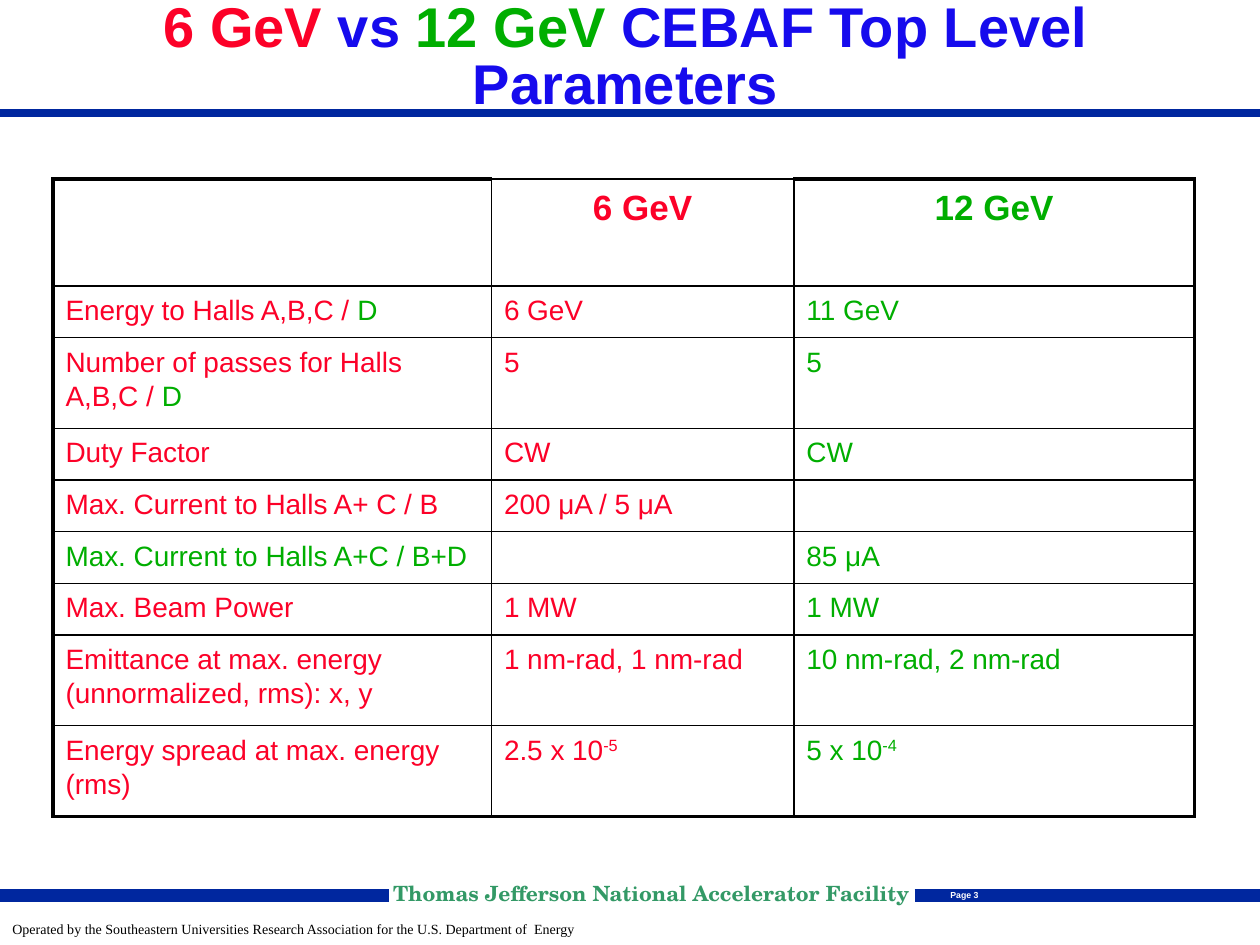
import dataclasses

import lxml.etree
import pptx
import pptx.dml.color
import pptx.enum.shapes
import pptx.enum.text
import pptx.oxml.ns
import pptx.util

Inches = pptx.util.Inches
Pt = pptx.util.Pt
ALIGN = pptx.enum.text.PP_ALIGN
ANCHOR = pptx.enum.text.MSO_ANCHOR


@dataclasses.dataclass(frozen=True)
class Theme:
    """Colours, fonts and type sizes of the slide."""

    red: str = "FC0128"
    green: str = "00AE00"
    blue: str = "160BED"
    bar: str = "00279F"
    facility: str = "339966"
    black: str = "000000"
    white: str = "FFFFFF"
    sans: str = "Arial"
    serif: str = "Times New Roman"
    school: str = "TeX Gyre Schola"
    title_size: float = 32
    header_size: float = 20
    body_size: float = 16
    facility_size: float = 12
    operator_size: float = 8
    page_size: float = 5
    thick: float = 2.25
    thin: float = 1


THEME = Theme()

TITLE = [("6 GeV ", THEME.red), ("vs ", THEME.blue), ("12 GeV", THEME.green),
         (" CEBAF Top Level Parameters", THEME.blue)]
COLUMN_WIDTHS = [3.48, 2.4, 3.18]
COLUMN_COLOURS = [THEME.red, THEME.red, THEME.green]
HEADER_HEIGHT, SINGLE_HEIGHT, DOUBLE_HEIGHT = 0.85, 0.41, 0.72
HALL_D = ("D", THEME.green)
PARAMETERS = [
    ("", "6 GeV", "12 GeV"),
    (["Energy to Halls A,B,C / ", HALL_D], "6 GeV", "11 GeV"),
    (["Number of passes for Halls A,B,C / ", HALL_D], "5", "5"),
    ("Duty Factor", "CW", "CW"),
    ("Max. Current to Halls A+ C / B", "200 μA / 5 μA", ""),
    ([("Max. Current to Halls A+C / B+D", THEME.green)], "", "85 μA"),
    ("Max. Beam Power", "1 MW", "1 MW"),
    ("Emittance at max. energy (unnormalized, rms): x, y",
     "1 nm-rad, 1 nm-rad", "10 nm-rad, 2 nm-rad"),
    ("Energy spread at max. energy (rms)",
     ["2.5 x 10", ("-5", THEME.red, True)],
     ["5 x 10", ("-4", THEME.green, True)]),
]
TWO_LINE_ROWS = {2, 7, 8}


def rgb(value):
    """Return the colour object for a hex value."""
    return pptx.dml.color.RGBColor.from_string(value)


def format_paragraph(paragraph, font, size, bold=False, spacing=1.0, align=ALIGN.LEFT):
    """Set the alignment, line spacing and font of a paragraph."""
    paragraph.alignment = align
    paragraph.line_spacing = spacing
    paragraph.font.name = font
    paragraph.font.size = Pt(size)
    paragraph.font.bold = bold


def add_run(paragraph, text, colour, superscript=False):
    """Append one coloured run, raised if it is a superscript."""
    run = paragraph.add_run()
    run.text = text
    run.font.color.rgb = rgb(colour)
    if superscript:
        run.font._element.set("baseline", "30000")


def set_title(slide):
    """Place and fill the title placeholder."""
    title = slide.shapes.title
    title.left, title.top = Inches(0.18), Inches(0.02)
    title.width, title.height = Inches(9.57), Inches(0.9)
    frame = title.text_frame
    frame.auto_size = pptx.enum.text.MSO_AUTO_SIZE.NONE
    frame.vertical_anchor = ANCHOR.MIDDLE
    heading = frame.paragraphs[0]
    format_paragraph(heading, THEME.sans, THEME.title_size, True, 0.85, ALIGN.CENTER)
    for text, colour in TITLE:
        add_run(heading, text, colour)


def add_bar(slide, start, end, y, weight):
    """Draw a horizontal bar in the frame colour."""
    bar = slide.shapes.add_connector(
        pptx.enum.shapes.MSO_CONNECTOR.STRAIGHT,
        Inches(start), Inches(y), Inches(end), Inches(y))
    bar.line.color.rgb = rgb(THEME.bar)
    bar.line.width = Pt(weight)
    lxml.etree.SubElement(bar._element.spPr, pptx.oxml.ns.qn("a:effectLst"))


def add_label(slide, text, box, colour, font, size, wrap=True, inset=True, **style):
    """Add a one-line text box of the footer."""
    frame = slide.shapes.add_textbox(*map(Inches, box)).text_frame
    frame.word_wrap = wrap
    if not inset:
        frame.margin_left = frame.margin_right = 0
        frame.margin_top = frame.margin_bottom = 0
    label = frame.paragraphs[0]
    format_paragraph(label, font, size, **style)
    add_run(label, text, colour)


def set_borders(cell, weights):
    """Draw the left, right, top and bottom borders of a cell."""
    properties = cell._tc.get_or_add_tcPr()
    for index, (side, weight) in enumerate(zip("LRTB", weights)):
        line = pptx.oxml.parse_xml(
            f'<a:ln{side} {pptx.oxml.ns.nsdecls("a")} w="{int(Pt(weight))}"><a:solidFill>'
            f'<a:srgbClr val="{THEME.black}"/></a:solidFill></a:ln{side}>')
        properties.insert(index, line)


def fill_cell(cell, content, colour, header):
    """Write the text of a cell and paint its background."""
    cell.fill.solid()
    cell.fill.fore_color.rgb = rgb(THEME.white)
    entry = cell.text_frame.paragraphs[0]
    size = THEME.header_size if header else THEME.body_size
    align = ALIGN.CENTER if header else ALIGN.LEFT
    format_paragraph(entry, THEME.sans, size, header, 1.1, align)
    parts = [content] if isinstance(content, str) else content
    for part in filter(None, parts):
        add_run(entry, *((part, colour) if isinstance(part, str) else part))


def add_parameter_table(slide):
    """Build the table that compares the two machines."""
    heights = [DOUBLE_HEIGHT if row in TWO_LINE_ROWS else SINGLE_HEIGHT
               for row in range(len(PARAMETERS))]
    heights[0] = HEADER_HEIGHT
    table = slide.shapes.add_table(
        len(heights), len(COLUMN_WIDTHS), Inches(0.42), Inches(1.42),
        Inches(sum(COLUMN_WIDTHS)), Inches(sum(heights))).table
    table.first_row = table.horz_banding = False
    for column, width in zip(table.columns, COLUMN_WIDTHS):
        column.width = Inches(width)
    last_row, last_column = len(heights) - 1, len(COLUMN_WIDTHS) - 1
    for r, contents in enumerate(PARAMETERS):
        table.rows[r].height = Inches(heights[r])
        for c, content in enumerate(contents):
            cell = table.cell(r, c)
            fill_cell(cell, content, COLUMN_COLOURS[c], r == 0)
            outer = (c == 0, c == last_column, r == 0 and c != 1, r == last_row)
            set_borders(cell, [THEME.thick if edge else THEME.thin for edge in outer])


def add_frame(slide):
    """Add the bars and the footer texts."""
    add_bar(slide, 0, 10, 0.9, 4.5)
    add_bar(slide, 0, 3.09, 7.11, 7.25)
    add_bar(slide, 7.26, 10, 7.11, 7.25)
    add_label(slide, "Operated by the Southeastern Universities Research Association "
              "for the U.S. Department of  Energy", (0, 7.3, 4.67, 0.18),
              THEME.black, THEME.serif, THEME.operator_size, spacing=0.6)
    add_label(slide, "Thomas Jefferson National Accelerator Facility",
              (3.12, 7.03, 4.16, 0.19), THEME.facility, THEME.school,
              THEME.facility_size, wrap=False, inset=False, bold=True, spacing=0.8)
    add_label(slide, "Page 3", (7.42, 7.01, 0.47, 0.18), THEME.white, THEME.sans,
              THEME.page_size, wrap=False, bold=True, align=ALIGN.CENTER)


def main():
    """Build the slide and save it."""
    deck = pptx.Presentation()
    deck.slide_width, deck.slide_height = Inches(10), Inches(7.5)
    slide = deck.slides.add_slide(deck.slide_layouts[5])
    add_frame(slide)
    add_parameter_table(slide)
    set_title(slide)
    deck.save("out.pptx")


if __name__ == "__main__":
    main()
